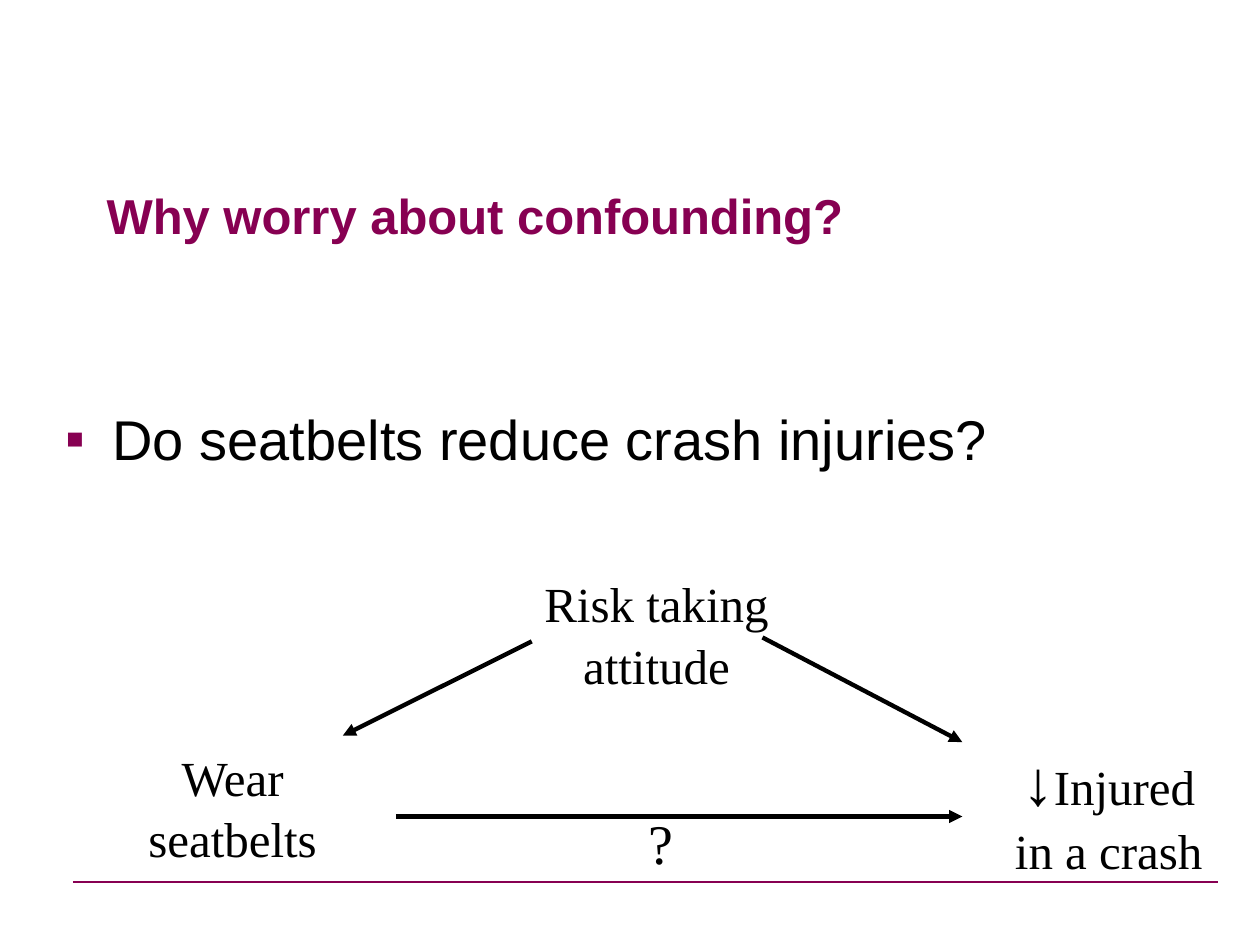
"""Build a slide on confounding between seatbelt use and crash injuries."""
from pptx import Presentation
from pptx.dml.color import RGBColor
from pptx.enum.shapes import MSO_CONNECTOR
from pptx.enum.text import MSO_ANCHOR, PP_ALIGN
from pptx.oxml.ns import qn
from pptx.util import Cm, Pt
from lxml.etree import SubElement

HUES = {"plum": "870052", "ink": "000000"}


def add_text(box, text, size, font="Times New Roman", hue="ink", bold=False):
    left, top, width, height = box
    frame = slide.shapes.add_textbox(Cm(left), Cm(top), Cm(width), Cm(height)).text_frame
    frame.word_wrap = True
    frame.text = text
    for run in frame.paragraphs[0].runs:
        run.font.name = font
        run.font.size = Pt(size)
        run.font.bold = bold
        run.font.color.rgb = RGBColor.from_string(HUES[hue])
    return frame


def add_line(ends, hue, width):
    line = slide.shapes.add_connector(MSO_CONNECTOR.STRAIGHT, *[Cm(end) for end in ends])
    line.line.color.rgb = RGBColor.from_string(HUES[hue])
    line.line.width = Pt(width)
    SubElement(line._element.spPr, qn("a:effectLst"))
    return line


deck = Presentation()
deck.slide_width, deck.slide_height = Cm(25.4), Cm(19.05)
slide = deck.slides.add_slide(deck.slide_layouts[6])

add_line((1.47, 17.78, 24.56, 17.78), "plum", 0.75)

title = add_text((1.9, 2.74, 21.6, 3.18), "Why worry about confounding?", 28, "Arial", "plum", True)
title.vertical_anchor = MSO_ANCHOR.MIDDLE

body = add_text((1.07, 6.53, 22.86, 9.35), "Do seatbelts reduce crash injuries?", 32, "Arial")
body.margin_top = Cm(1.62)
props = body.paragraphs[0]._p.get_or_add_pPr()
props.set("marL", str(Cm(0.95)))
props.set("indent", str(-Cm(0.95)))
tint = SubElement(props, qn("a:buClr"))
SubElement(tint, qn("a:srgbClr"), val=HUES["plum"])
SubElement(props, qn("a:buFont"), typeface="Arial")
SubElement(props, qn("a:buChar"), char="▪")

arrows = [
    (10.72, 12.93, 6.91, 14.83),
    (15.37, 12.85, 19.4, 14.96),
    (7.98, 16.46, 19.4, 16.46),
]
for ends in arrows:
    arrow = add_line(ends, "ink", 2.5)
    SubElement(arrow.line._get_or_add_ln(), qn("a:tailEnd"), type="triangle")

labels = [
    ((12.5, 16.1, 1.63, 1.6), "?", 32),
    ((1.83, 14.88, 5.72, 2.62), "Wear seatbelts", 28),
    ((9.96, 11.38, 6.55, 2.62), "Risk taking attitude", 28),
    ((19.81, 14.76, 5.08, 2.97), "↓", 36),
]
for box, text, size in labels:
    label = add_text(box, text, size).paragraphs[0]
    label.alignment = PP_ALIGN.CENTER
    label.line_spacing = 1.05

label.runs[0].font.bold = True
for part in ("Injured", "in a crash"):
    if len(label.runs) > 1:
        label.add_line_break()
    run = label.add_run()
    run.text = part
    run.font.name = "Times New Roman"
    run.font.size = Pt(28)
    run.font.color.rgb = RGBColor.from_string(HUES["ink"])

deck.save("out.pptx")
